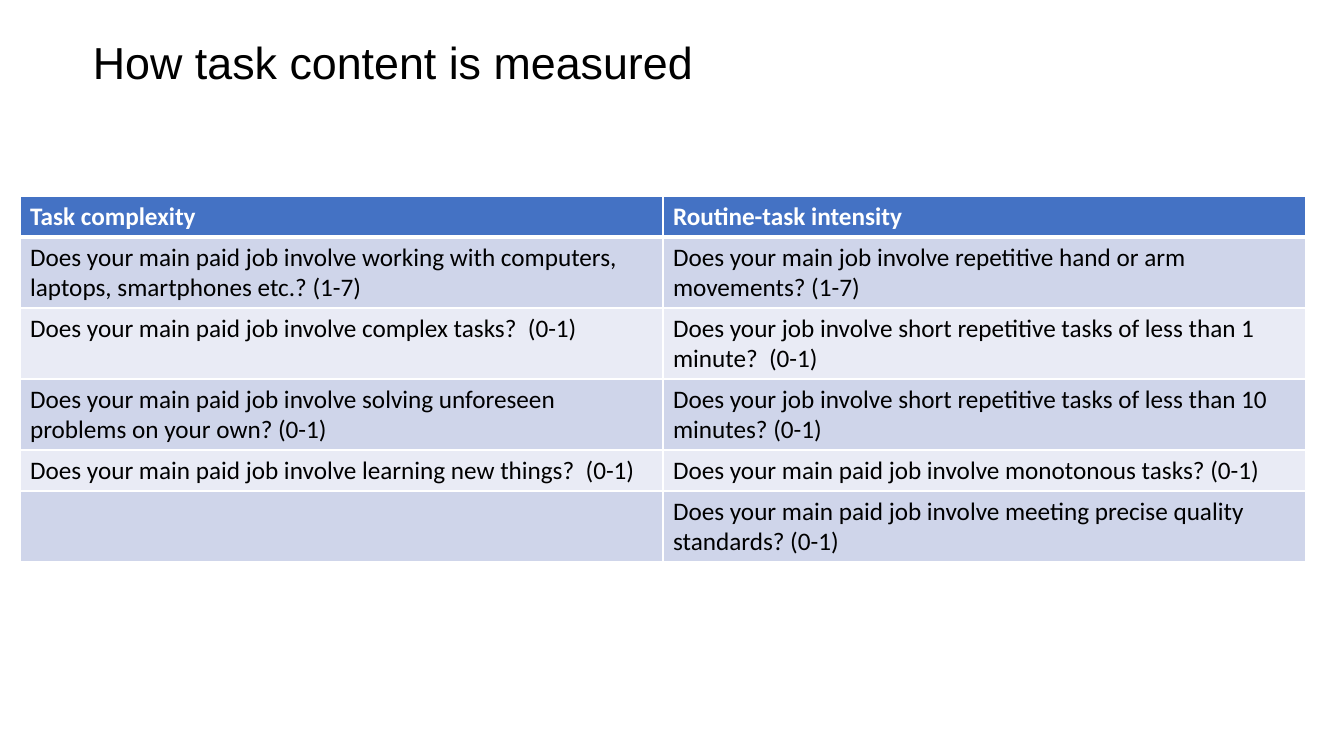
from lxml import etree
from pptx import Presentation
from pptx.dml.color import RGBColor
from pptx.enum.text import MSO_ANCHOR
from pptx.oxml.ns import qn
from pptx.util import Emu, Pt

MIDDLE = MSO_ANCHOR.MIDDLE

TITLE = "How task content is measured"
HEADINGS = ("Task complexity", "Routine-task intensity")
QUESTIONS = [
    ("Does your main paid job involve working with computers, laptops, smartphones etc.? (1-7)",
     "Does your main job involve repetitive hand or arm movements? (1-7)"),
    ("Does your main paid job involve complex tasks?  (0-1)",
     "Does your job involve short repetitive tasks of less than 1 minute?  (0-1)"),
    ("Does your main paid job involve solving unforeseen problems on your own? (0-1)",
     "Does your job involve short repetitive tasks of less than 10 minutes? (0-1)"),
    ("Does your main paid job involve learning new things?  (0-1)",
     "Does your main paid job involve monotonous tasks? (0-1)"),
    ("", "Does your main paid job involve meeting precise quality standards? (0-1)"),
]

BLACK, WHITE = "000000", "FFFFFF"
HEADER_FILL = "4472C4"
BAND_FILLS = ("CFD5EA", "E9EBF5")

SLIDE_SIZE = (1344, 756)
TITLE_BOX = (83, 30, 1159, 70)
TABLE_LEFT, TABLE_TOP = 20, 196
COLUMN_WIDTH = 643
ROW_HEIGHTS = (41, 71, 71, 71, 41, 71)


def px(length):
    return Emu(round(length * 914400 / 100.8))


def color(hex_code):
    return RGBColor.from_string(hex_code)


def write(frame, text, size=18, font="Calibri", ink=BLACK, bold=False):
    paragraph = frame.paragraphs[0]
    paragraph.font.size = Pt(size)
    if text:
        run = paragraph.add_run()
        run.text = text
        run.font.size = Pt(size)
        run.font.name = font
        run.font.bold = bold
        run.font.color.rgb = color(ink)
    return paragraph


def add_borders(cell, **widths):
    """Draw white cell edges; widths in points, keyed L, R, T, B in that order."""
    properties = cell._tc.get_or_add_tcPr()
    for position, (edge, width) in enumerate(widths.items()):
        line = etree.Element(qn(f"a:ln{edge}"), w=str(Pt(width)))
        fill = etree.SubElement(line, qn("a:solidFill"))
        etree.SubElement(fill, qn("a:srgbClr"), val=WHITE)
        properties.insert(position, line)


def add_title(slide):
    frame = slide.shapes.add_textbox(*map(px, TITLE_BOX)).text_frame
    frame.word_wrap = True
    frame.vertical_anchor = MIDDLE
    write(frame, TITLE, size=32, font="Arial").line_spacing = 0.9


def add_question_table(slide):
    rows = [HEADINGS, *QUESTIONS]
    table = slide.shapes.add_table(
        len(rows), len(HEADINGS), px(TABLE_LEFT), px(TABLE_TOP),
        px(COLUMN_WIDTH * len(HEADINGS)), px(sum(ROW_HEIGHTS))).table
    for column in table.columns:
        column.width = px(COLUMN_WIDTH)
    for r, (texts, height) in enumerate(zip(rows, ROW_HEIGHTS)):
        header = r == 0
        table.rows[r].height = px(height)
        for c, text in enumerate(texts):
            cell = table.cell(r, c)
            cell.fill.solid()
            cell.fill.fore_color.rgb = color(HEADER_FILL if header else BAND_FILLS[(r - 1) % 2])
            add_borders(cell, L=1, R=1, T=3 if r == 1 else 1, B=3 if header else 1)
            write(cell.text_frame, text, ink=WHITE if header else BLACK, bold=header)


def main():
    deck = Presentation()
    deck.slide_width, deck.slide_height = map(px, SLIDE_SIZE)
    slide = deck.slides.add_slide(deck.slide_layouts[6])
    add_title(slide)
    add_question_table(slide)
    deck.save("out.pptx")


if __name__ == "__main__":
    main()
